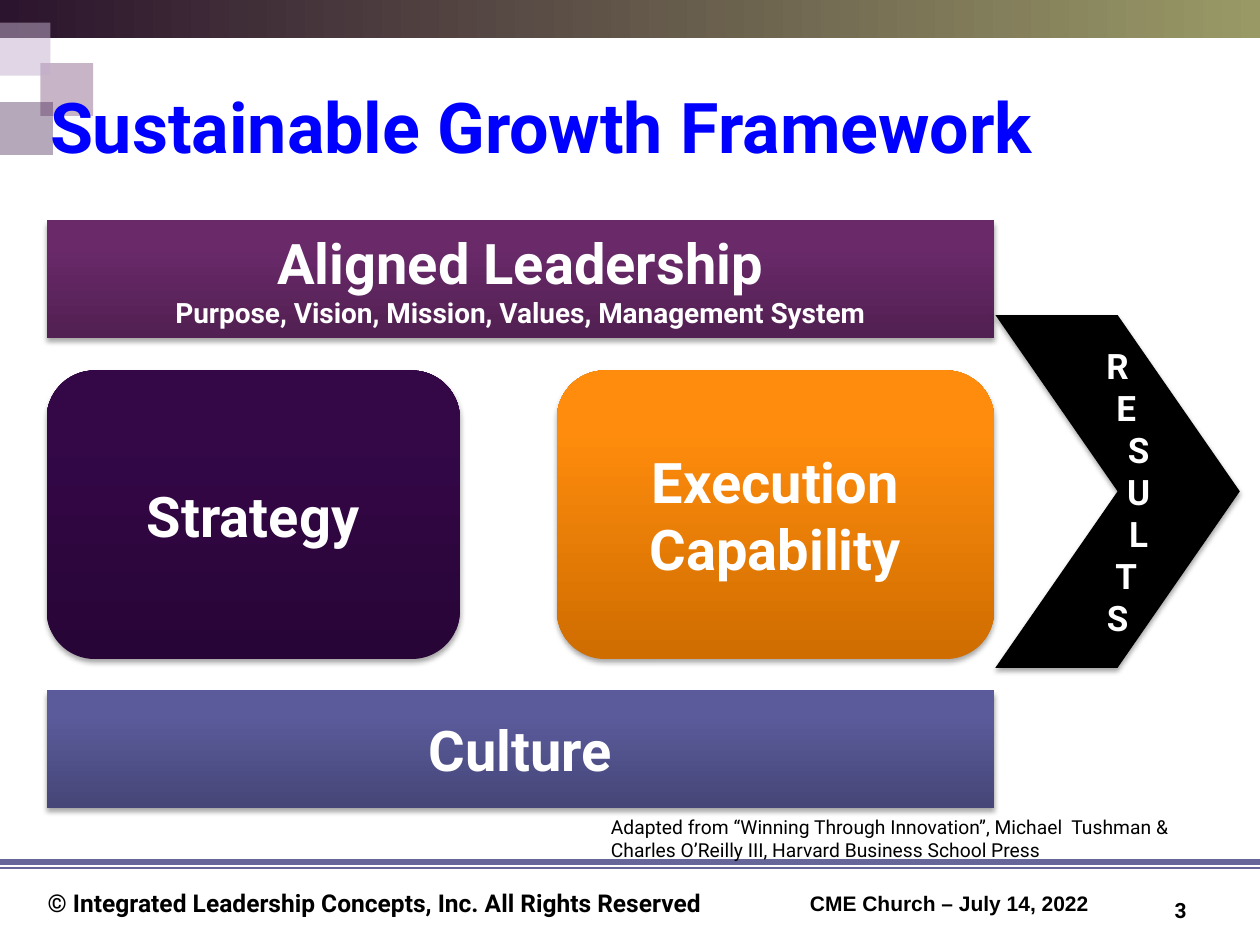
from copy import deepcopy
from typing import NamedTuple

from lxml import etree
from pptx import Presentation
from pptx.dml.color import RGBColor
from pptx.enum.shapes import MSO_CONNECTOR, MSO_SHAPE
from pptx.enum.text import MSO_ANCHOR, PP_ALIGN
from pptx.oxml.ns import qn
from pptx.util import Emu, Inches, Pt

RECT, ROUND, CHEVRON = MSO_SHAPE.RECTANGLE, MSO_SHAPE.ROUNDED_RECTANGLE, MSO_SHAPE.CHEVRON
TOP, MIDDLE, BOTTOM = MSO_ANCHOR.TOP, MSO_ANCHOR.MIDDLE, MSO_ANCHOR.BOTTOM
LEFT, CENTER = PP_ALIGN.LEFT, PP_ALIGN.CENTER
STRAIGHT = MSO_CONNECTOR.STRAIGHT

BLACK = RGBColor(0x00, 0x00, 0x00)
WHITE = RGBColor(0xFF, 0xFF, 0xFF)
TITLE_BLUE = RGBColor(0x00, 0x00, 0xFF)
RULE = RGBColor(0x66, 0x66, 0x99)
LILAC = RGBColor(0xC3, 0xAF, 0xCC)
PLUM = RGBColor(0x66, 0x33, 0x66)
AUBERGINE = RGBColor(0x33, 0x0F, 0x42)
BANNER = ((0, RGBColor(0x2B, 0x14, 0x2D)), (1, RGBColor(0x99, 0x99, 0x66)))
PURPLE = ((0, RGBColor(0x52, 0x20, 0x52)), (0.8, RGBColor(0x6A, 0x2A, 0x6A)),
          (1, RGBColor(0x6C, 0x29, 0x6C)))
INDIGO = ((0, RGBColor(0x46, 0x46, 0x78)), (0.8, RGBColor(0x5B, 0x5B, 0x9C)),
          (1, RGBColor(0x5B, 0x5B, 0x9E)))
VIOLET = ((0, RGBColor(0x28, 0x05, 0x37)), (0.8, RGBColor(0x34, 0x07, 0x47)),
          (1, RGBColor(0x35, 0x06, 0x49)))
ORANGE = ((0, RGBColor(0xCF, 0x6D, 0x00)), (0.8, RGBColor(0xFF, 0x8C, 0x0D)),
          (1, RGBColor(0xFF, 0x8D, 0x0F)))

COLS, ROWS = 100, 75
WIDTH, HEIGHT = Inches(10), Inches(7.5)


class Box(NamedTuple):
    """Left, top, width and height in grid columns and rows."""
    col: float
    row: float
    cols: float
    rows: float

    def emu(self) -> list[Emu]:
        x, y = WIDTH / COLS, HEIGHT / ROWS
        return [Emu(round(n * unit)) for n, unit in zip(self, (x, y, x, y))]


class Line(NamedTuple):
    """A paragraph; indent in points moves a centred line by half of it."""
    text: str
    size: float
    color: RGBColor = WHITE
    bold: bool = True
    font: str = "Roboto"
    indent: float = 0


class Block(NamedTuple):
    kind: MSO_SHAPE
    box: Box
    fill: tuple
    lines: list[Line]


class Square(NamedTuple):
    col: float
    row: float
    color: RGBColor
    opacity: int


class Label(NamedTuple):
    box: Box
    line: Line
    anchor: MSO_ANCHOR = TOP
    align: PP_ALIGN = LEFT


SQUARE_SIZE = 4.2
SQUARES = [
    Square(3.2, 5, PLUM, 36),
    Square(-0.2, 1.8, LILAC, 51),
    Square(0, 8.1, AUBERGINE, 36),
]
RULES = [(68.9, 0.75), (68.4, 3.25)]

FRAME_LEFT, FRAME_COLS, BAR_ROWS = 3.7, 75.2, 9.3
PILLAR_TOP, PILLAR_ROWS = 29.4, 22.9
LETTER_INDENTS = zip("RESULTS", (0, 10, 24, 24, 24, 10, 0))
BLOCKS = [
    Block(RECT, Box(FRAME_LEFT, 17.5, FRAME_COLS, BAR_ROWS), PURPLE,
          [Line("Aligned Leadership", 32),
           Line("Purpose, Vision, Mission, Values, Management System", 16)]),
    Block(RECT, Box(FRAME_LEFT, 54.8, FRAME_COLS, BAR_ROWS), INDIGO, [Line("Culture", 32)]),
    Block(ROUND, Box(FRAME_LEFT, PILLAR_TOP, 32.8, PILLAR_ROWS), VIOLET,
          [Line("Strategy", 32)]),
    Block(ROUND, Box(44.2, PILLAR_TOP, 34.7, PILLAR_ROWS), ORANGE,
          [Line("Execution", 32), Line("Capability", 32)]),
    Block(CHEVRON, Box(79, 25, 19.4, 28), ((0, BLACK), (1, BLACK)),
          [Line(letter, 20, indent=indent) for letter, indent in LETTER_INDENTS]),
]
LABELS = [
    Label(Box(63.3, 70, 27, 3.2),
          Line("CME Church – July 14, 2022", 12, BLACK, font="Arial"), BOTTOM),
    Label(Box(2.8, 70, 61.7, 3.3),
          Line("© Integrated Leadership Concepts, Inc. All Rights Reserved", 14, BLACK)),
    Label(Box(90.8, 70.2, 5.8, 4), Line("3", 12, BLACK), MIDDLE, CENTER),
    Label(Box(47.5, 64.2, 47.8, 4.7),
          Line("Adapted from “Winning Through Innovation”, Michael  Tushman & "
               "Charles O’Reilly III, Harvard Business School Press", 11, BLACK, bold=False)),
]
TITLE = Label(Box(1.7, 5.3, 82.5, 9.3),
              Line("Sustainable Growth Framework", 40, TITLE_BLUE), MIDDLE, CENTER)


def write(tf, lines: list[Line], anchor: MSO_ANCHOR, align: PP_ALIGN) -> None:
    tf.word_wrap = True
    tf.vertical_anchor = anchor
    for i, line in enumerate(lines):
        p = tf.add_paragraph() if i else tf.paragraphs[0]
        p.alignment = align
        if line.indent:
            p._p.get_or_add_pPr().set("marL", str(Pt(line.indent)))
        r = p.add_run()
        r.text = line.text
        r.font.size, r.font.bold, r.font.name = Pt(line.size), line.bold, line.font
        r.font.color.rgb = line.color


def add_plain(s, kind: MSO_SHAPE, box: Box):
    """Add a shape without outline or shadow."""
    sp = s.shapes.add_shape(kind, *box.emu())
    sp.line.fill.background()
    sp.shadow.inherit = False
    return sp


def fill_gradient(sp, stops: tuple, angle: float) -> None:
    sp.fill.gradient()
    sp.fill.gradient_angle = angle
    gs_list = sp.element.spPr.find(".//" + qn("a:gsLst"))
    while len(gs_list) < len(stops):
        gs_list.append(deepcopy(gs_list[0]))
    for stop, (position, color) in zip(sp.fill.gradient_stops, stops):
        stop.position = position
        stop.color.rgb = color


def add_square(s, square: Square) -> None:
    sp = add_plain(s, RECT, Box(square.col, square.row, SQUARE_SIZE, SQUARE_SIZE))
    sp.fill.solid()
    sp.fill.fore_color.rgb = square.color
    color = sp.element.spPr.find(".//" + qn("a:srgbClr"))
    etree.SubElement(color, qn("a:alpha"), val=str(square.opacity * 1000))


def add_rule(s, row: float, weight: float) -> None:
    left, y, width, _ = Box(0, row, COLS, 0).emu()
    line = s.shapes.add_connector(STRAIGHT, left, y, width, y)
    line.line.color.rgb = RULE
    line.line.width = Pt(weight)
    etree.SubElement(line.element.spPr, qn("a:effectLst"))


def add_block(s, block: Block) -> None:
    sp = add_plain(s, block.kind, block.box)
    fill_gradient(sp, block.fill, 90)
    effects = sp.element.spPr.find(qn("a:effectLst"))
    shadow = etree.SubElement(effects, qn("a:outerShdw"), blurRad=str(Pt(3.1)),
                              dist=str(Pt(1.8)), dir="5400000", rotWithShape="0")
    color = etree.SubElement(shadow, qn("a:srgbClr"), val=str(BLACK))
    etree.SubElement(color, qn("a:alpha"), val="35000")
    tf = sp.text_frame
    tf.margin_top = tf.margin_bottom = 0
    write(tf, block.lines, MIDDLE, CENTER)


def add_label(s, label: Label) -> None:
    tb = s.shapes.add_textbox(*label.box.emu())
    write(tb.text_frame, [label.line], label.anchor, label.align)


def place_title(s, label: Label) -> None:
    title = s.shapes.title
    title.left, title.top, title.width, title.height = label.box.emu()
    write(title.text_frame, [label.line], label.anchor, label.align)
    title.element.getparent().append(title.element)  # bring in front of the squares


def main() -> None:
    prs = Presentation()
    prs.slide_width, prs.slide_height = WIDTH, HEIGHT
    s = prs.slides.add_slide(prs.slide_layouts[5])
    fill_gradient(add_plain(s, RECT, Box(0, 0, COLS, 3)), BANNER, 0)
    for square in SQUARES:
        add_square(s, square)
    for row, weight in RULES:
        add_rule(s, row, weight)
    place_title(s, TITLE)
    for block in BLOCKS:
        add_block(s, block)
    for label in LABELS:
        add_label(s, label)
    prs.save("out.pptx")


if __name__ == "__main__":
    main()
